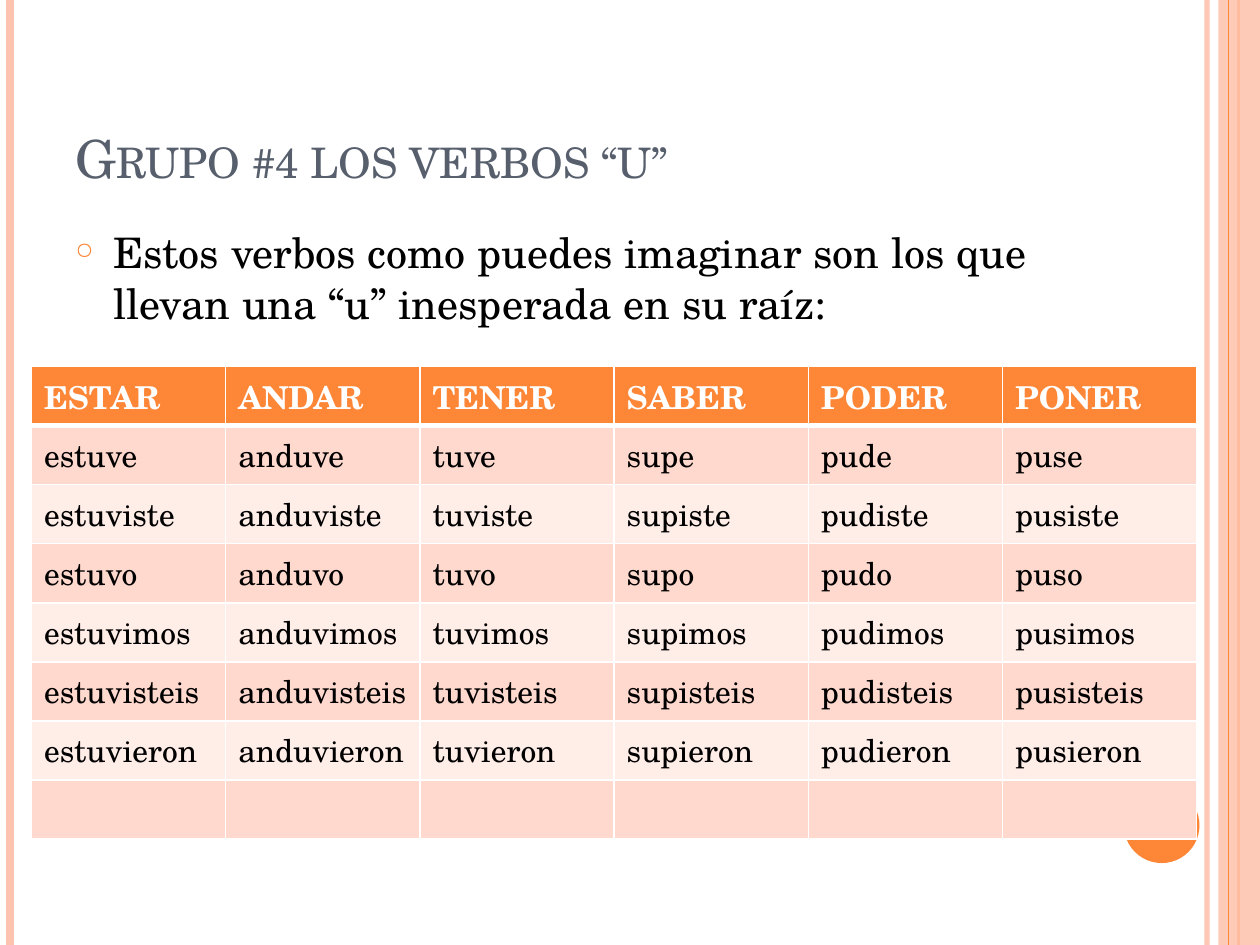
import pptx
import pptx.util
import pptx.dml.color
import pptx.enum.shapes
import pptx.enum.text
import pptx.oxml
import pptx.oxml.ns
import lxml.etree

Inches, Pt = pptx.util.Inches, pptx.util.Pt
qn = pptx.oxml.ns.qn

FONT = "TeX Gyre Schola"
COLORS = {
    "accent": "FE8637", "stripe": "FEC3AE", "title": "575F6D", "text": "000000",
    "white": "FFFFFF", "band_dark": "FFD9CE", "band_light": "FFEDE8",
}
TITLE = "Grupo #4 los verbos “u”"
BODY = "Estos verbos como puedes imaginar son los que llevan una “u” inesperada en su raíz:"
HEADERS = ["ESTAR", "ANDAR", "TENER", "SABER", "PODER", "PONER"]
STEMS = ["estuv", "anduv", "tuv", "sup", "pud", "pus"]
ENDINGS = ["e", "iste", "o", "imos", "isteis", "ieron"]
ROWS = [HEADERS] + [[stem + end for stem in STEMS] for end in ENDINGS] + [[""] * len(STEMS)]

OUTER_STRIPES = [(9.58, "stripe", 3, 93), (0.08, "stripe", 4.5, 100), (9.83, "accent", 1.5, 100)]
BAND_STRIPE = (9.75, "accent", 0.75, 100)


def rgb(name):
    return pptx.dml.color.RGBColor.from_string(COLORS[name])


def sub(parent, tag, **attrs):
    return lxml.etree.SubElement(parent, qn(tag), attrs)


def set_alpha(sp, percent):
    for clr in sp._element.spPr.iter(qn("a:srgbClr")):
        sub(clr, "a:alpha", val=str(percent * 1000))


def add_stripe(slide, x, color, width, alpha):
    line = slide.shapes.add_connector(
        pptx.enum.shapes.MSO_CONNECTOR.STRAIGHT, Inches(x), 0, Inches(x), Inches(7.5))
    line.line.color.rgb = rgb(color)
    line.line.width = Pt(width)
    if alpha < 100:
        set_alpha(line, alpha)
    sub(line._element.spPr, "a:effectLst")


def add_block(slide, kind, box, color):
    sp = slide.shapes.add_shape(kind, *map(Inches, box))
    sp.shadow.inherit = False
    sp.fill.solid()
    sp.fill.fore_color.rgb = rgb(color)
    sp.line.fill.background()
    return sp


def add_run(p, text, size, color, bold=False):
    r = p.add_run()
    r.text = text
    r.font.name = FONT
    r.font.size = Pt(size)
    r.font.bold = bold
    r.font.color.rgb = rgb(color)
    return r


def add_text(slide, box, text, size, color, anchor):
    tf = slide.shapes.add_textbox(*map(Inches, box)).text_frame
    tf.word_wrap = True
    tf.vertical_anchor = anchor
    p = tf.paragraphs[0]
    return p, add_run(p, text, size, color)


def add_bullet(p, indent):
    pPr = p._p.get_or_add_pPr()
    pPr.set("marL", str(Inches(indent)))
    pPr.set("indent", str(-Inches(indent)))
    sub(sub(pPr, "a:buClr"), "a:srgbClr", val=COLORS["accent"])
    sub(pPr, "a:buSzPct", val="55000")
    sub(pPr, "a:buChar", char="○")


def set_borders(cell, bottom):
    tcPr = cell._tc.get_or_add_tcPr()
    for side, width in (("L", 1), ("R", 1), ("T", 1), ("B", bottom)):
        ln = sub(tcPr, "a:ln" + side, w=str(Pt(width)))
        sub(sub(ln, "a:solidFill"), "a:srgbClr", val=COLORS["white"])


def fill_cell(cell, text, row):
    header = row == 0
    set_borders(cell, 3 if header else 1)
    cell.fill.solid()
    band = "band_dark" if row % 2 else "band_light"
    cell.fill.fore_color.rgb = rgb("accent" if header else band)
    p = cell.text_frame.paragraphs[0]
    if text:
        add_run(p, text, 18, "white" if header else "text", header)
    else:
        end = sub(p._p, "a:endParaRPr", sz="1800")
        sub(end, "a:latin", typeface=FONT)


def add_verb_table(slide):
    table = slide.shapes.add_table(
        len(ROWS), len(HEADERS), Inches(0.25), Inches(2.91), Inches(9.25), Inches(3.75)).table
    for i, texts in enumerate(ROWS):
        for j, text in enumerate(texts):
            fill_cell(table.cell(i, j), text, i)


def main():
    prs = pptx.Presentation()
    prs.slide_width, prs.slide_height = Inches(10), Inches(7.5)
    slide = prs.slides.add_slide(prs.slide_layouts[6])
    shapes = pptx.enum.shapes.MSO_SHAPE
    anchors = pptx.enum.text.MSO_ANCHOR

    for stripe in OUTER_STRIPES:
        add_stripe(slide, *stripe)
    band = add_block(slide, shapes.RECTANGLE, (9.67, 0, 0.33, 7.5), "stripe")
    set_alpha(band, 87)
    add_stripe(slide, *BAND_STRIPE)
    add_block(slide, shapes.OVAL, (8.92, 6.25, 0.6, 0.6), "accent")

    p, r = add_text(slide, (0.5, 0.3, 8.17, 1.25), TITLE, 30, "title", anchors.BOTTOM)
    r.font._element.set("cap", "small")
    p, r = add_text(slide, (0.5, 1.75, 8.17, 5.33), BODY, 24, "text", anchors.TOP)
    p.space_before = Pt(6)
    add_bullet(p, 0.3)
    add_verb_table(slide)
    prs.save("out.pptx")


if __name__ == "__main__":
    main()
